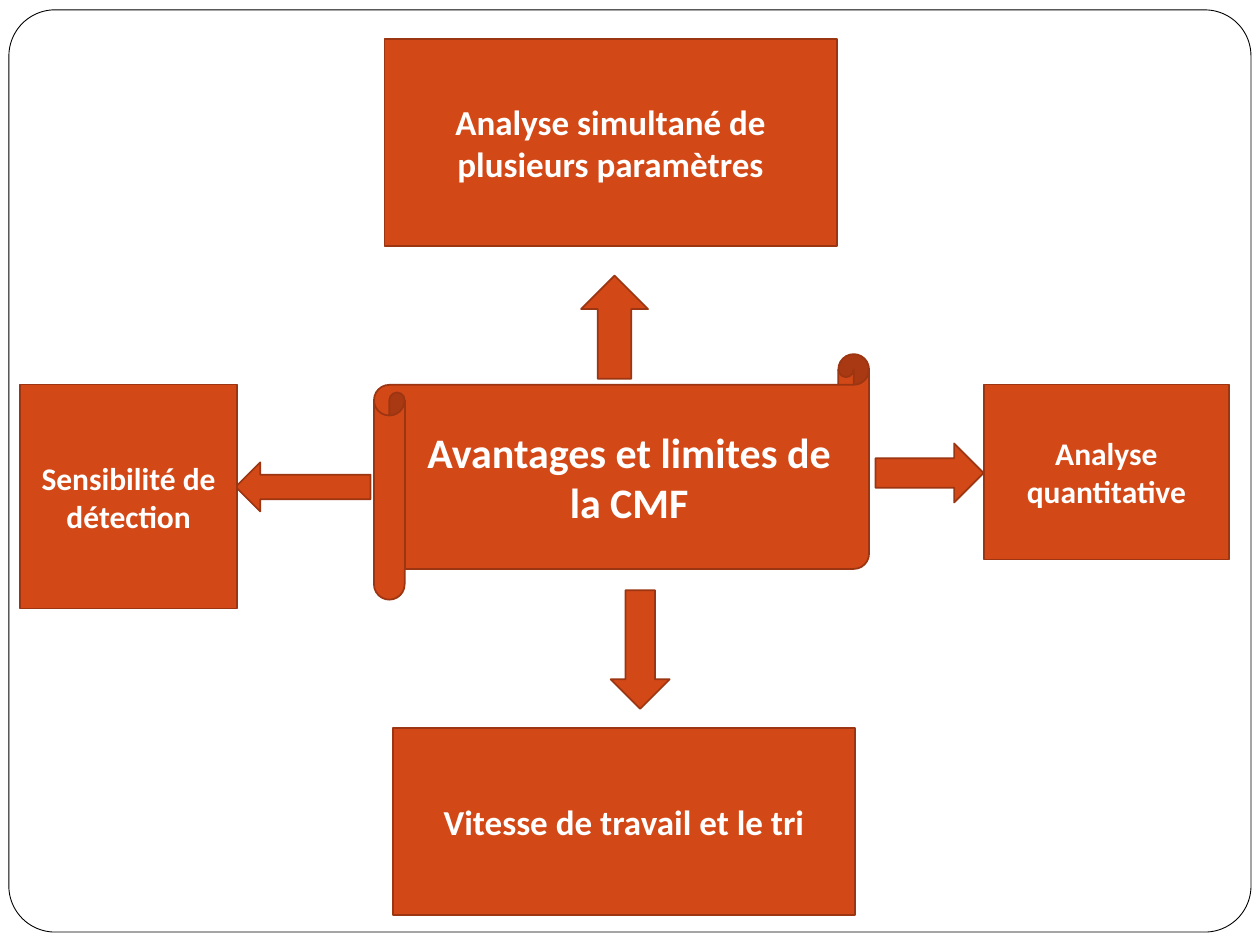
from dataclasses import dataclass

from pptx import Presentation
from pptx import util as u
from pptx.dml.color import RGBColor
from pptx.enum import shapes, text

KIND = shapes.MSO_SHAPE


@dataclass(frozen=True)
class Theme:
    font: str = "Calibri"
    paper: str = "FFFFFF"
    frame_line: str = "000000"
    accent: str = "D34817"
    accent_line: str = "9C3511"
    lettering: str = "FFFFFF"
    title_size: int = 24
    large_size: int = 20
    small_size: int = 18
    frame_width: float = 0.5
    accent_width: float = 1


class Diagram:
    """Draws the parts of the diagram; every place is left, top, width, height in cm."""

    def __init__(self, slide, theme):
        self.slide = slide
        self.theme = theme

    def _shape(self, kind, place, fill, line, width):
        shape = self.slide.shapes.add_shape(kind, *(u.Cm(length) for length in place))
        shape.shadow.inherit = False
        shape.fill.solid()
        shape.fill.fore_color.rgb = RGBColor.from_string(fill)
        shape.line.color.rgb = RGBColor.from_string(line)
        shape.line.width = u.Pt(width)
        return shape

    def _accent(self, kind, place):
        theme = self.theme
        return self._shape(kind, place, theme.accent, theme.accent_line, theme.accent_width)

    def frame(self, place, rounding):
        theme = self.theme
        border = self._shape(KIND.ROUNDED_RECTANGLE, place, theme.paper,
                             theme.frame_line, theme.frame_width)
        border.adjustments[0] = rounding

    def panel(self, wording, place, size, kind=KIND.RECTANGLE):
        body = self._accent(kind, place).text_frame
        body.text = wording
        body.word_wrap = True
        body.vertical_anchor = text.MSO_ANCHOR.MIDDLE
        paragraph = body.paragraphs[0]
        paragraph.alignment = text.PP_ALIGN.CENTER
        font = paragraph.runs[0].font
        font.name = self.theme.font
        font.size = u.Pt(size)
        font.bold = True
        font.color.rgb = RGBColor.from_string(self.theme.lettering)

    def arrow(self, place, rotation):
        self._accent(KIND.RIGHT_ARROW, place).rotation = rotation


def main():
    theme = Theme()
    deck = Presentation()
    deck.slide_width, deck.slide_height = u.Cm(25.4), u.Cm(19.05)
    diagram = Diagram(deck.slides.add_slide(deck.slide_layouts[6]), theme)

    # Rounded page border
    diagram.frame((0.18, 0.2, 25.04, 18.59), rounding=0.05)

    # Central topic
    diagram.panel("Avantages et limites de la CMF", (7.54, 7.14, 9.98, 4.95),
                  theme.title_size, KIND.HORIZONTAL_SCROLL)

    # Arrows from the topic: up, down, right, left
    for place, rotation in (
        ((11.35, 5.92, 2.08, 1.35), 270),
        ((11.71, 12.5, 2.39, 1.19), 90),
        ((17.65, 8.94, 2.18, 1.19), 0),
        ((4.75, 9.32, 2.72, 0.99), 180),
    ):
        diagram.arrow(place, rotation)

    # Points around the topic: top, left, right, bottom
    for wording, place, size in (
        ("Analyse simultané de plusieurs paramètres", (7.75, 0.79, 9.12, 4.17), theme.large_size),
        ("Sensibilité de détection", (0.41, 7.75, 4.37, 4.52), theme.small_size),
        ("Analyse quantitative", (19.84, 7.75, 4.93, 3.53), theme.small_size),
        ("Vitesse de travail et le tri", (7.92, 14.68, 9.32, 3.76), theme.large_size),
    ):
        diagram.panel(wording, place, size)

    deck.save("out.pptx")


if __name__ == "__main__":
    main()
